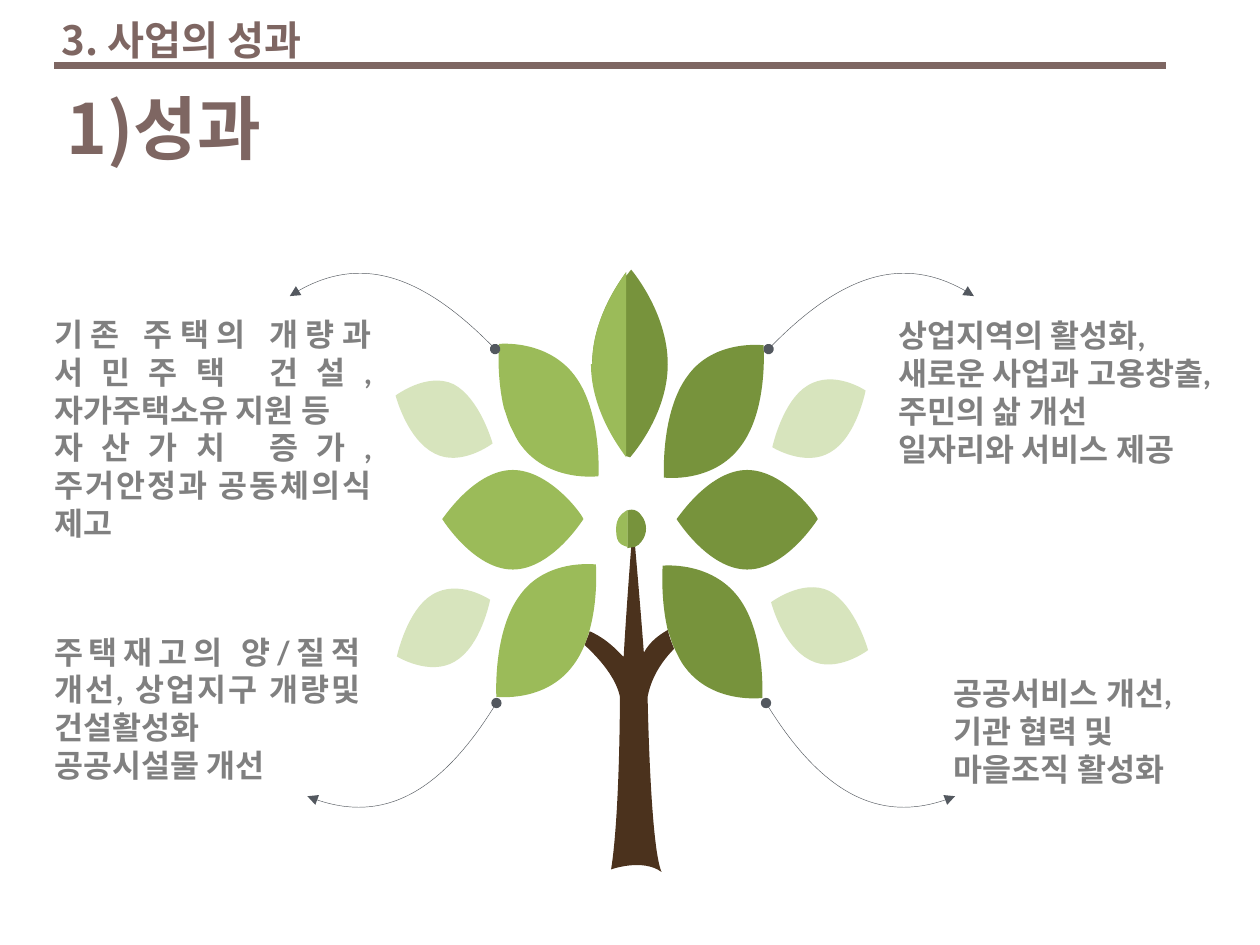
import pptx
import pptx.dml.color
import pptx.enum.shapes
import pptx.enum.text
import pptx.oxml
import pptx.oxml.ns
import pptx.util

PX = 9144  # EMU in one px, 100 px to the inch
COLORS = {"brown": "7E6662", "bark": "4B321D", "dark": "77933C", "light": "9BBB59",
          "pale": "D7E4BD", "grey": "808080", "arrow": "53585F"}
HEADING = {"name": "Noto Sans CJK KR", "bold": True}
BODY = {"name": "Lato", "bold": True, "size": pptx.util.Pt(18)}
ALIGN = pptx.enum.text.PP_ALIGN
ANCHOR = pptx.enum.text.MSO_ANCHOR

# Outlines: a start point, then three points for each Bézier curve.
TRUNK = [511, 518, 511, 518, 509, 490, 504, 433, 503, 434, 502, 434, 501, 434,
         499, 459, 496, 502, 495, 521, 495, 523, 486, 509, 468, 501,
         467, 505, 465, 508, 464, 512, 476, 523, 489, 538, 492, 553,
         492, 553, 492, 646, 485, 690, 485, 690, 510, 681, 525, 692,
         516, 671, 514, 553, 514, 553, 517, 537, 526, 524, 535, 515,
         533, 510, 531, 505, 530, 500, 523, 504, 516, 509, 511, 518]
TOP_LEAF = [501, 214, 501, 214, 471, 248, 471, 289, 471, 289, 470, 289, 470, 289,
            470, 253, 492, 223, 497, 216, 497, 362, 497, 362, 497, 362,
            501, 363, 500, 363, 500, 363, 500, 363, 530, 330, 530, 289,
            530, 248, 501, 214, 501, 214]
TOP_LEAF_HALF = [470, 289, 470, 289, 469, 289, 469, 289, 469, 326, 492, 356, 497, 363,
                 497, 362, 497, 216, 497, 216, 492, 223, 470, 253, 470, 289]
BUD = [509, 430, 514, 424, 514, 415, 509, 409, 505, 403, 498, 403, 493, 409,
       491, 412, 490, 416, 490, 420, 490, 416, 490, 413, 492, 410,
       494, 407, 498, 405, 498, 405, 498, 435, 498, 435, 498, 435,
       500, 435, 502, 434, 504, 434, 506, 433, 508, 432, 509, 430]
BUD_HALF = [492, 410, 490, 412, 489, 416, 489, 419, 489, 423, 489, 427, 491, 430,
            493, 433, 498, 434, 498, 434, 498, 434, 498, 405, 498, 405,
            498, 405, 494, 407, 492, 410]

# Right-hand leaves: right colour, left colour, shift to the left-hand twin, outline.
LEAVES = [
    ("pale", "pale", (-298, -164),
     [658, 469, 637, 459, 612, 478, 612, 478, 612, 478, 621, 513, 643, 524,
      664, 535, 689, 516, 689, 516, 689, 516, 679, 480, 658, 469]),
    ("pale", "pale", (-298, 166),
     [659, 359, 680, 347, 687, 310, 687, 310, 687, 310, 662, 293, 641, 306,
      621, 318, 613, 355, 613, 355, 613, 355, 639, 371, 659, 359]),
    ("dark", "light", (-130, -176),
     [526, 449, 526, 449, 524, 475, 530, 500, 532, 505, 533, 510, 535, 514,
      538, 520, 540, 525, 544, 530, 566, 559, 605, 554, 605, 554,
      605, 554, 608, 503, 586, 474, 564, 445, 526, 449, 526, 449]),
    ("dark", "light", (-133, 174),
     [527, 379, 527, 379, 566, 384, 588, 354, 610, 325, 606, 274, 606, 274,
      606, 274, 567, 269, 546, 298, 524, 327, 527, 379, 527, 379]),
    ("dark", "light", (-186, 0),
     [593, 373, 564, 373, 540, 408, 537, 412, 537, 412, 562, 452, 593, 452,
      624, 452, 649, 412, 649, 412, 648, 408, 622, 373, 593, 373]),
]

# Left-hand arrows, each with the sum of x of a point and its mirrored twin.
ARROWS = [([230, 235, 280, 202, 334, 216, 393, 277], 1003),
          ([244, 632, 299, 655, 350, 630, 394, 558], 1002)]

NOTES = [
    ((43, 250, 252, 151), ALIGN.JUSTIFY,
     ["기존 주택의 개량과 서민주택 건설, 자가주택소유 지원 등",
      "자산가치 증가, 주거안정과 공동체의식 제고"]),
    ((713, 251, 262, 121), ALIGN.LEFT,
     ["상업지역의 활성화,", "새로운 사업과 고용창출, 주민의 삶 개선", "일자리와 서비스 제공"]),
    ((43, 502, 243, 121), ALIGN.JUSTIFY,
     ["주택재고의 양/질적 개선, 상업지구 개량및 건설활성화", "공공시설물 개선"]),
    ((757, 535, 218, 91), ALIGN.LEFT,
     ["공공서비스 개선, 기관 협력 및 마을조직 활성화"]),
]


def color(name):
    return pptx.dml.color.RGBColor.from_string(COLORS[name])


def pairs(numbers):
    return list(zip(numbers[::2], numbers[1::2]))


class Painter:
    def __init__(self, slide):
        self.slide = slide

    def text(self, place, lines, style, ink, align=ALIGN.LEFT, anchor=ANCHOR.TOP, inset=None):
        box = self.slide.shapes.add_textbox(*(n * PX for n in place))
        frame = box.text_frame
        layout = {"word_wrap": True, "vertical_anchor": anchor}
        if inset is not None:
            for side in ("left", "top", "right", "bottom"):
                layout["margin_" + side] = inset * PX
        for key, value in layout.items():
            setattr(frame, key, value)
        for index, line in enumerate(lines):
            para = frame.add_paragraph() if index else frame.paragraphs[0]
            para.alignment = align
            span = para.add_run()
            span.text = line
            for key, value in style.items():
                setattr(span.font, key, value)
            span.font.color.rgb = color(ink)
            latin = span.font._element.find(pptx.oxml.ns.qn("a:latin"))
            east = pptx.oxml.parse_xml(
                f'<a:ea {pptx.oxml.ns.nsdecls("a")} typeface="{style["name"]}"/>')
            latin.addnext(east)

    def rule(self, start, end, ink, width):
        line = self.slide.shapes.add_connector(
            pptx.enum.shapes.MSO_CONNECTOR.STRAIGHT, *(n * PX for n in start + end))
        line.line.color.rgb = color(ink)
        line.line.width = pptx.util.Pt(width)
        line._element.spPr.append(
            pptx.oxml.parse_xml(f'<a:effectLst {pptx.oxml.ns.nsdecls("a")}/>'))

    def curve(self, points, close):
        """Draw a freeform and join every three of its points into one Bézier curve."""
        builder = self.slide.shapes.build_freeform(*points[0], scale=PX)
        builder.add_line_segments(points[1:], close=False)
        shape = builder.convert_to_shape()
        shape.shadow.inherit = False
        outline = shape._element.find(".//" + pptx.oxml.ns.qn("a:path"))
        steps = outline.findall(pptx.oxml.ns.qn("a:lnTo"))
        for first in range(0, len(steps), 3):
            bend = pptx.oxml.parse_xml(f'<a:cubicBezTo {pptx.oxml.ns.nsdecls("a")}/>')
            for step in steps[first:first + 3]:
                bend.append(step[0])
                outline.remove(step)
            outline.append(bend)
        if close:
            outline.append(pptx.oxml.parse_xml(f'<a:close {pptx.oxml.ns.nsdecls("a")}/>'))
        return shape

    def patch(self, points, ink):
        shape = self.curve(points, close=True)
        shape.fill.solid()
        shape.fill.fore_color.rgb = color(ink)
        shape.line.fill.background()

    def arrow(self, points):
        shape = self.curve(points, close=False)
        shape.fill.background()
        shape.line.color.rgb = color("arrow")
        shape.line.width = pptx.util.Pt(0.25)
        stroke = shape._element.spPr.find(pptx.oxml.ns.qn("a:ln"))
        for end, kind in (("headEnd", "triangle"), ("tailEnd", "oval")):
            stroke.append(pptx.oxml.parse_xml(
                f'<a:{end} {pptx.oxml.ns.nsdecls("a")} type="{kind}"/>'))


def main():
    deck = pptx.Presentation()
    deck.slide_width, deck.slide_height = 1000 * PX, 750 * PX
    page = Painter(deck.slides.add_slide(deck.slide_layouts[6]))

    page.rule((43, 52), (925, 52), "brown", 4.5)
    page.text((39, 0, 445, 63), ["3. 사업의 성과"], {**HEADING, "size": pptx.util.Pt(23)},
              "brown", anchor=ANCHOR.MIDDLE)
    page.text((43, 63, 900, 125), ["1)성과"], {**HEADING, "size": pptx.util.Pt(39.6)}, "brown")

    page.patch(pairs(TRUNK), "bark")
    for right, left, (dx, dy), outline in LEAVES:
        points = pairs(outline)
        page.patch(points, right)
        page.patch([(x + dx, y + dy) for x, y in points], left)
    for whole, half in ((TOP_LEAF, TOP_LEAF_HALF), (BUD, BUD_HALF)):
        page.patch(pairs(whole), "dark")
        page.patch(pairs(half), "light")

    for outline, mirror in ARROWS:
        points = pairs(outline)
        page.arrow(points)
        page.arrow([(mirror - x, y) for x, y in points])
    for place, align, lines in NOTES:
        page.text(place, lines, BODY, "grey", align, inset=0)

    deck.save("out.pptx")


if __name__ == "__main__":
    main()
